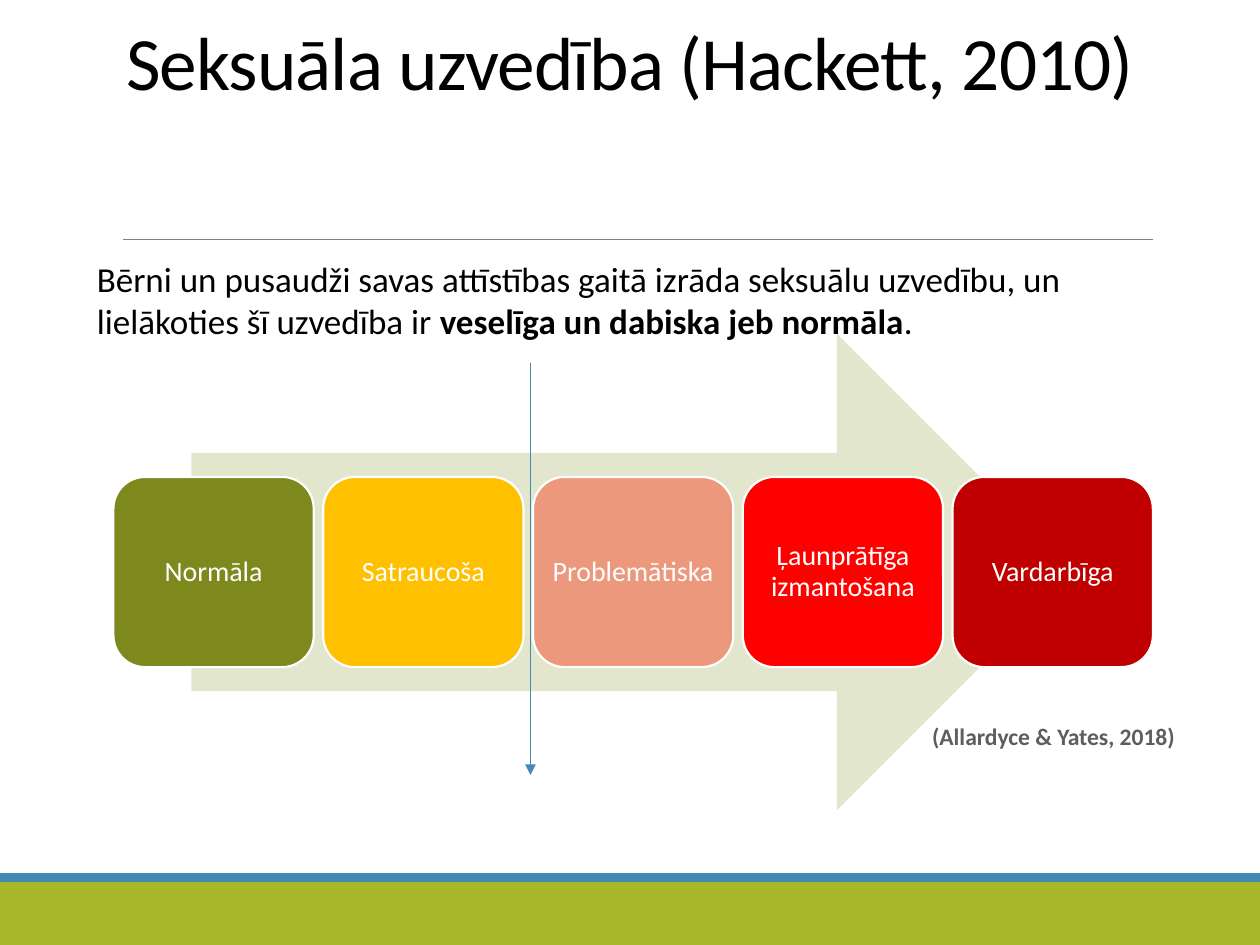
from lxml.etree import SubElement
from pptx import Presentation
from pptx.dml.color import RGBColor
from pptx.enum.shapes import MSO_CONNECTOR, MSO_SHAPE
from pptx.enum.text import MSO_ANCHOR, PP_ALIGN
from pptx.oxml.ns import qn
from pptx.util import Inches, Pt

BLACK = RGBColor(0x00, 0x00, 0x00)
WHITE = RGBColor(0xFF, 0xFF, 0xFF)
GREY = RGBColor(0x80, 0x80, 0x80)
DARK_GREY = RGBColor(0x5E, 0x5E, 0x5E)
LIME = RGBColor(0xA6, 0xB7, 0x27)
BLUE = RGBColor(0x41, 0x8A, 0xB3)
PALE_GREEN = RGBColor(0xE1, 0xE6, 0xCD)

TITLE = "Seksuāla uzvedība (Hackett, 2010)"
INTRO = [
    ("Bērni un pusaudži savas attīstības gaitā izrāda seksuālu uzvedību, "
     "un lielākoties šī uzvedība ir ", False),
    ("veselīga un dabiska jeb normāla", True),
    (".", False),
]
STAGES = [
    ("Normāla", RGBColor(0x7D, 0x89, 0x1D)),
    ("Satraucoša", RGBColor(0xFF, 0xC0, 0x00)),
    ("Problemātiska", RGBColor(0xEC, 0x98, 0x7D)),
    ("Ļaunprātīga izmantošana", RGBColor(0xFF, 0x00, 0x00)),
    ("Vardarbīga", RGBColor(0xC0, 0x00, 0x00)),
]
CITATION = [("(Allardyce & Yates, 2018)", True)]

SLIDE_W, SLIDE_H = 10, 7.5
LEFT, CONTENT_W = 0.9, 8.25
FOOTER_H, STRIPE_H = 0.5, 0.07
ARROW_TOP, ARROW_H = 2.65, 3.78
CARD_H, CARD_GAP = 1.51, 0.075
CARD_W = (CONTENT_W - CARD_GAP * (len(STAGES) - 1)) / len(STAGES)
CARD_TOP = ARROW_TOP + (ARROW_H - CARD_H) / 2


def add_run(p, text, size, color, bold=False):
    r = p.add_run()
    r.text = text
    r.font.name = "Calibri"
    r.font.size = Pt(size)
    r.font.bold = bold
    r.font.color.rgb = color
    return r


def add_block(slide, kind, x, y, w, h, fill):
    sp = slide.shapes.add_shape(kind, Inches(x), Inches(y), Inches(w), Inches(h))
    sp.shadow.inherit = False
    sp.fill.solid()
    sp.fill.fore_color.rgb = fill
    sp.line.fill.background()
    return sp


def add_line(slide, x1, y1, x2, y2, color, width):
    line = slide.shapes.add_connector(
        MSO_CONNECTOR.STRAIGHT, Inches(x1), Inches(y1), Inches(x2), Inches(y2))
    line.line.color.rgb = color
    line.line.width = Pt(width)
    SubElement(line._element.spPr, qn("a:effectLst"))
    return line


def add_text(slide, x, y, w, h, runs, size, color, inset_top=0.05):
    tf = slide.shapes.add_textbox(
        Inches(x), Inches(y), Inches(w), Inches(h)).text_frame
    tf.word_wrap = True
    tf.margin_top = Inches(inset_top)
    for text, bold in runs:
        add_run(tf.paragraphs[0], text, size, color, bold)


def add_title(slide):
    sp = slide.shapes.title
    sp.left, sp.top = Inches(LEFT), Inches(0.29)
    sp.width, sp.height = Inches(CONTENT_W), Inches(1.22)
    tf = sp.text_frame
    tf.word_wrap = True
    tf.vertical_anchor = MSO_ANCHOR.BOTTOM
    tf.margin_bottom = Inches(0.67)
    p = tf.paragraphs[0]
    p.alignment = PP_ALIGN.LEFT
    p.line_spacing = 0.85
    r = add_run(p, TITLE, 43, BLACK)
    r.font._element.set("spc", "-50")


def add_card(slide, column, text, fill):
    x = LEFT + column * (CARD_W + CARD_GAP)
    sp = add_block(slide, MSO_SHAPE.ROUNDED_RECTANGLE,
                   x, CARD_TOP, CARD_W, CARD_H, fill)
    sp.line.color.rgb = WHITE
    sp.line.width = Pt(1.25)
    tf = sp.text_frame
    tf.word_wrap = True
    tf.vertical_anchor = MSO_ANCHOR.MIDDLE
    tf.margin_left = tf.margin_right = Inches(0.07)
    tf.margin_top = tf.margin_bottom = Inches(0.07)
    p = tf.paragraphs[0]
    p.alignment = PP_ALIGN.CENTER
    p.line_spacing = 0.9
    add_run(p, text, 16, WHITE)


def main():
    prs = Presentation()
    prs.slide_width, prs.slide_height = Inches(SLIDE_W), Inches(SLIDE_H)
    slide = prs.slides.add_slide(prs.slide_layouts[5])

    footer_top = SLIDE_H - FOOTER_H
    add_block(slide, MSO_SHAPE.RECTANGLE, 0, footer_top, SLIDE_W, FOOTER_H, LIME)
    add_block(slide, MSO_SHAPE.RECTANGLE,
              0, footer_top - STRIPE_H, SLIDE_W, STRIPE_H, BLUE)
    add_line(slide, 0.98, 1.9, LEFT + CONTENT_W, 1.9, GREY, 0.5)
    add_title(slide)

    add_block(slide, MSO_SHAPE.RIGHT_ARROW,
              1.52, ARROW_TOP, 0.85 * CONTENT_W, ARROW_H, PALE_GREEN)
    for column, (text, fill) in enumerate(STAGES):
        add_card(slide, column, text, fill)

    divider = add_line(slide, 4.21, 2.88, 4.21, 6.15, BLUE, 1)
    SubElement(divider.line._get_or_add_ln(), qn("a:tailEnd"), type="triangle")

    add_text(slide, 0.67, 1.51, 8.72, 1.72, INTRO, 20, BLACK, inset_top=0.53)
    add_text(slide, 7.3, 5.68, 2.4, 0.33, CITATION, 13.5, DARK_GREY)
    prs.save("out.pptx")


if __name__ == "__main__":
    main()
